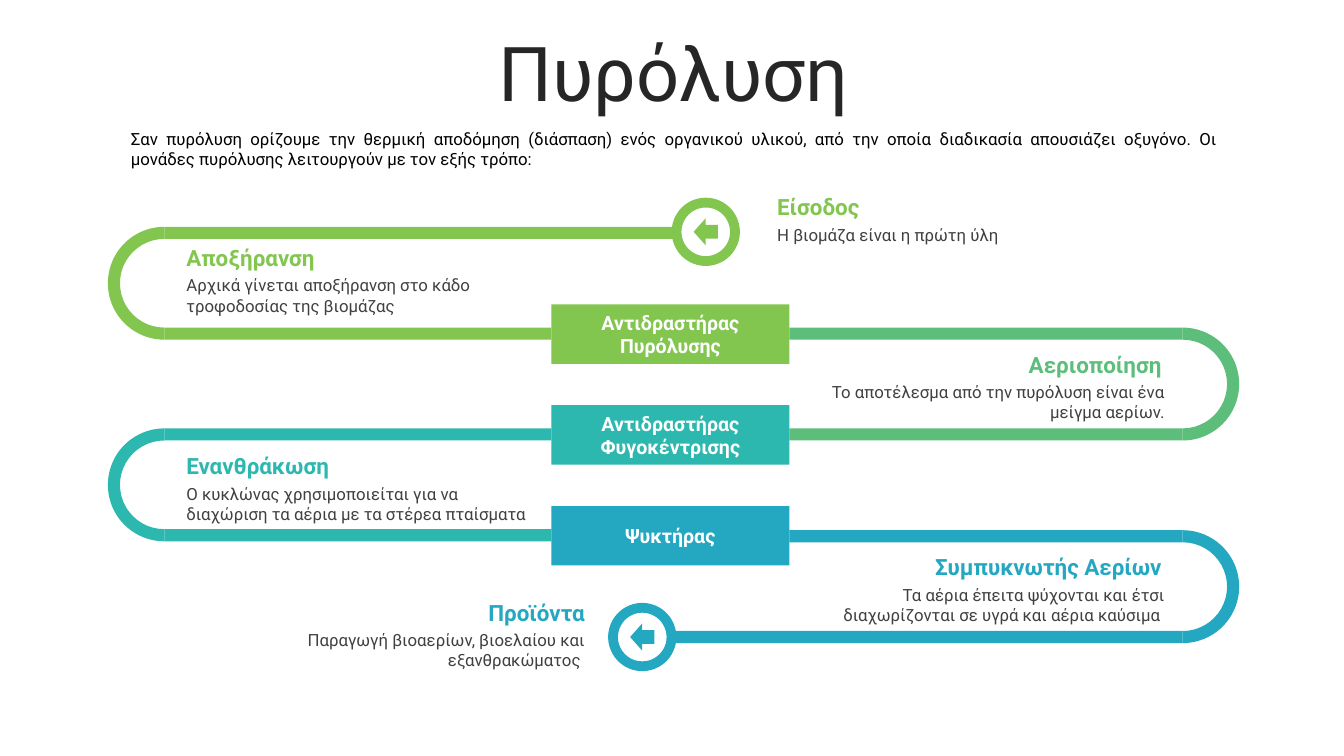
from dataclasses import dataclass

from pptx import Presentation
from pptx.dml.color import RGBColor
from pptx.enum.shapes import MSO_SHAPE
from pptx.enum.text import MSO_ANCHOR, MSO_AUTO_SIZE, PP_ALIGN
from pptx.shapes.autoshape import Shape
from pptx.slide import Slide
from pptx.text.text import TextFrame
from pptx.util import Inches, Pt

LEFT, CENTER, RIGHT, JUSTIFY = PP_ALIGN.LEFT, PP_ALIGN.CENTER, PP_ALIGN.RIGHT, PP_ALIGN.JUSTIFY
TOP, MIDDLE = MSO_ANCHOR.TOP, MSO_ANCHOR.MIDDLE
RECTANGLE, OVAL = MSO_SHAPE.RECTANGLE, MSO_SHAPE.OVAL
BLOCK_ARC, LEFT_ARROW = MSO_SHAPE.BLOCK_ARC, MSO_SHAPE.LEFT_ARROW
NO_AUTOSIZE = MSO_AUTO_SIZE.NONE

GREEN = RGBColor(0x82, 0xC6, 0x50)
MINT = RGBColor(0x5C, 0xBE, 0x7A)
TEAL = RGBColor(0x2C, 0xB8, 0xAE)
BLUE = RGBColor(0x24, 0xA8, 0xC2)
WHITE = RGBColor(0xFF, 0xFF, 0xFF)
BLACK = RGBColor(0, 0, 0)
DARK = RGBColor(0x26, 0x26, 0x26)
GREY = RGBColor(0x40, 0x40, 0x40)

FONT = "Roboto"
BEND_SIZE = 1.12
BAND = 0.12
LEFT_BEND, RIGHT_BEND = 1.07, 11.17
STATION_LEFT, STATION_WIDTH, STATION_HEIGHT = 5.47, 2.36, 0.59
STATION_RIGHT = STATION_LEFT + STATION_WIDTH
RING_SIZE = 0.58
ARROW_WIDTH, ARROW_HEIGHT = 0.24, 0.27


@dataclass
class Loop:
    bend_left: float
    top: float
    upper_end: float
    lower_end: float
    color: RGBColor


@dataclass
class Station:
    label: str
    top: float
    color: RGBColor


@dataclass
class Terminal:
    left: float
    top: float
    color: RGBColor


@dataclass
class Caption:
    heading: str
    detail: str
    left: float
    top: float
    width: float
    heading_width: float
    color: RGBColor
    align: PP_ALIGN


LOOPS = [
    Loop(LEFT_BEND, 2.25, 6.68, STATION_LEFT, GREEN),
    Loop(LEFT_BEND, 4.25, STATION_LEFT, STATION_LEFT, TEAL),
    Loop(RIGHT_BEND, 3.25, STATION_RIGHT, STATION_RIGHT, MINT),
    Loop(RIGHT_BEND, 5.26, STATION_RIGHT, 6.64, BLUE),
]
STATIONS = [
    Station("Αντιδραστήρας Πυρόλυσης", 3.02, GREEN),
    Station("Αντιδραστήρας Φυγοκέντρισης", 4.02, TEAL),
    Station("Ψυκτήρας", 5.02, BLUE),
]
TERMINALS = [Terminal(6.71, 2.01, GREEN), Terminal(6.08, 6.03, BLUE)]
CAPTIONS = [
    Caption("Είσοδος", "Η βιομάζα είναι η πρώτη ύλη",
            7.61, 1.87, 3.23, 3.23, GREEN, LEFT),
    Caption("Αποξήρανση", "Αρχικά γίνεται αποξήρανση στο κάδο τροφοδοσίας της βιομάζας",
            1.75, 2.37, 3.55, 3.52, GREEN, LEFT),
    Caption("Αεριοποίηση", "Το αποτέλεσμα από την πυρόλυση είναι ένα μείγμα αερίων.",
            8.06, 3.43, 3.59, 3.56, MINT, RIGHT),
    Caption("Ενανθράκωση",
            "O κυκλώνας χρησιμοποιείται για να διαχώριση τα αέρια με τα στέρεα πταίσματα",
            1.75, 4.44, 3.59, 3.56, TEAL, LEFT),
    Caption("Συμπυκνωτής Αερίων",
            "Τα αέρια έπειτα ψύχονται και έτσι διαχωρίζονται σε υγρά και αέρια καύσιμα ",
            8.02, 5.44, 3.63, 3.6, BLUE, RIGHT),
    Caption("Προϊόντα", "Παραγωγή βιοαερίων, βιοελαίου και εξανθρακώματος ",
            2.68, 5.89, 3.22, 3.22, BLUE, RIGHT),
]
INTRO = (
    "Σαν πυρόλυση ορίζουμε την θερμική αποδόμηση (διάσπαση) ενός οργανικού υλικού, "
    "από την οποία διαδικασία απουσιάζει οξυγόνο. Οι μονάδες πυρόλυσης λειτουργούν "
    "με τον εξής τρόπο:"
)


def write(frame: TextFrame, text: str, size: float, color: RGBColor,
          align: PP_ALIGN, bold: bool = False, anchor: MSO_ANCHOR = TOP) -> None:
    frame.text = text
    frame.word_wrap = True
    frame.auto_size = NO_AUTOSIZE
    frame.vertical_anchor = anchor
    para = frame.paragraphs[0]
    para.alignment = align
    para.font.name = FONT
    para.font.size = Pt(size)
    para.font.bold = bold
    para.font.color.rgb = color


def add_text(page: Slide, text: str, left: float, top: float, width: float, height: float,
             size: float, color: RGBColor, align: PP_ALIGN, bold: bool = False) -> None:
    box = page.shapes.add_textbox(Inches(left), Inches(top), Inches(width), Inches(height))
    write(box.text_frame, text, size, color, align, bold)


def add_solid(page: Slide, kind: MSO_SHAPE, left: float, top: float,
              width: float, height: float, color: RGBColor) -> Shape:
    shape = page.shapes.add_shape(
        kind, Inches(left), Inches(top), Inches(width), Inches(height))
    shape.shadow.inherit = False
    shape.fill.solid()
    shape.fill.fore_color.rgb = color
    shape.line.fill.background()
    return shape


def draw_loop(page: Slide, loop: Loop) -> None:
    bend = add_solid(page, BLOCK_ARC, loop.bend_left, loop.top, BEND_SIZE, BEND_SIZE, loop.color)
    angles = (54, 162) if loop.bend_left == LEFT_BEND else (162, 54)
    for index, value in enumerate((*angles, BAND / BEND_SIZE)):
        bend.adjustments[index] = value
    middle = loop.bend_left + BEND_SIZE / 2
    for end, top in ((loop.upper_end, loop.top), (loop.lower_end, loop.top + BEND_SIZE - BAND)):
        add_solid(page, RECTANGLE, min(middle, end), top, abs(end - middle), BAND, loop.color)


def draw_station(page: Slide, station: Station) -> None:
    box = add_solid(page, RECTANGLE, STATION_LEFT, station.top,
                    STATION_WIDTH, STATION_HEIGHT, station.color)
    write(box.text_frame, station.label, 14, WHITE, CENTER, True, MIDDLE)


def draw_terminal(page: Slide, terminal: Terminal) -> None:
    ring = add_solid(page, OVAL, terminal.left, terminal.top, RING_SIZE, RING_SIZE, WHITE)
    ring.fill.background()
    ring.line.color.rgb = terminal.color
    ring.line.width = Pt(7)
    add_solid(page, LEFT_ARROW, terminal.left + (RING_SIZE - ARROW_WIDTH) / 2,
              terminal.top + (RING_SIZE - ARROW_HEIGHT) / 2,
              ARROW_WIDTH, ARROW_HEIGHT, terminal.color)


def draw_caption(page: Slide, caption: Caption) -> None:
    add_text(page, caption.detail, caption.left, caption.top + 0.31, caption.width, 0.5,
             12, GREY, caption.align)
    add_text(page, caption.heading, caption.left, caption.top, caption.heading_width, 0.37,
             16, caption.color, caption.align, True)


def main() -> None:
    deck = Presentation()
    deck.slide_width, deck.slide_height = Inches(13.33), Inches(7.5)
    page = deck.slides.add_slide(deck.slide_layouts[5])
    title = page.shapes.title
    title.left, title.top = Inches(0.35), Inches(0.37)
    title.width, title.height = Inches(12.66), Inches(0.79)
    write(title.text_frame, "Πυρόλυση", 54, DARK, CENTER, anchor=MIDDLE)
    title.text_frame.paragraphs[0].line_spacing = 0.9
    title.text_frame.paragraphs[0].space_before = Pt(10)
    for loop in LOOPS:
        draw_loop(page, loop)
    for station in STATIONS:
        draw_station(page, station)
    for terminal in TERMINALS:
        draw_terminal(page, terminal)
    for caption in CAPTIONS:
        draw_caption(page, caption)
    add_text(page, INTRO, 1.2, 1.23, 10.98, 0.5, 12, BLACK, JUSTIFY)
    deck.save("out.pptx")


if __name__ == "__main__":
    main()
